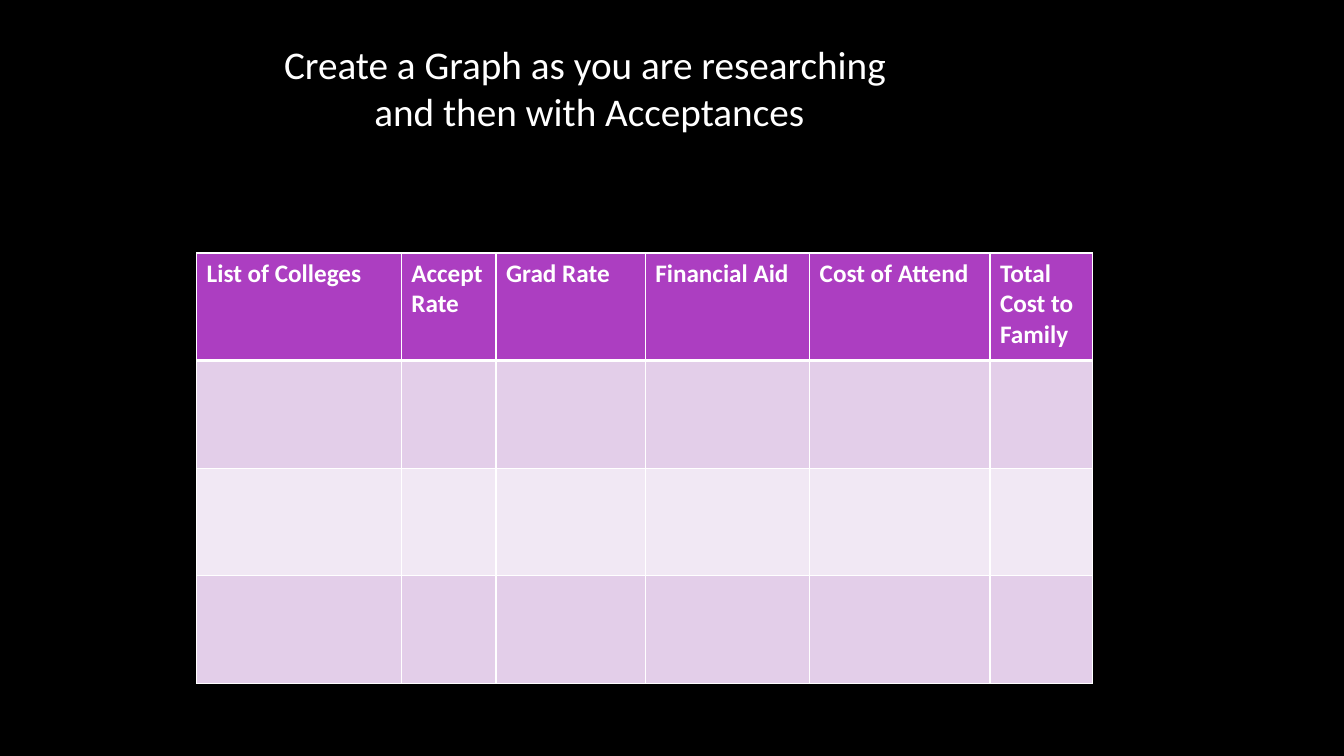
"""Build a slide with a college comparison table."""
from lxml.etree import SubElement
from pptx import Presentation
from pptx.dml.color import RGBColor
from pptx.enum.text import MSO_ANCHOR, MSO_AUTO_SIZE, PP_ALIGN
from pptx.oxml.ns import qn
from pptx.util import Inches, Pt

COLORS = {"back": "000000", "line": "FFFFFF", "text": "FFFFFF",
          "head": "AC3EC1", "dark": "E3CEE9", "light": "F1E8F4"}


def write(frame, text, size=18, bold=False, align=PP_ALIGN.LEFT):
    frame.text = text
    for para in frame.paragraphs:
        para.alignment = align
        for run in para.runs:
            run.font.name = "Calibri"
            run.font.size = Pt(size)
            run.font.bold = bold
            run.font.color.rgb = RGBColor.from_string(COLORS["text"])


def border(cell, side, width):
    line = SubElement(cell._tc.get_or_add_tcPr(), qn(f"a:{side}"), w=str(Pt(width)))
    fill = SubElement(line, qn("a:solidFill"))
    SubElement(fill, qn("a:srgbClr"), val=COLORS["line"])


deck = Presentation()
deck.slide_width, deck.slide_height = Inches(13.33), Inches(7.5)
slide = deck.slides.add_slide(deck.slide_layouts[5])
slide.background.fill.solid()
slide.background.fill.fore_color.rgb = RGBColor.from_string(COLORS["back"])

title = slide.shapes.title
title.left, title.top = Inches(2.54), Inches(0.35)
title.width, title.height = Inches(6.61), Inches(1.04)
frame = title.text_frame
frame.word_wrap = True
frame.auto_size = MSO_AUTO_SIZE.NONE
frame.vertical_anchor = MSO_ANCHOR.TOP
write(frame, "Create a Graph as you are researching \nand then with Acceptances",
      size=28, align=PP_ALIGN.CENTER)

heads = ["List of Colleges", "Accept\nRate", "Grad Rate", "Financial Aid",
         "Cost of Attend", "Total Cost to Family"]
widths = [2.03, 0.94, 1.48, 1.63, 1.79, 1.02]
fills = ["head", "dark", "light", "dark"]

table = slide.shapes.add_table(len(fills), len(heads), Inches(1.95), Inches(2.51),
                               Inches(8.89), Inches(4.27)).table
for column, width in zip(table.columns, widths):
    column.width = Inches(width)

for row, name in enumerate(fills):
    for col, head in enumerate(heads):
        cell = table.cell(row, col)
        border(cell, "lnL", 1)
        border(cell, "lnR", 1)
        border(cell, "lnT", 3 if row == 1 else 1)
        border(cell, "lnB", 3 if row == 0 else 1)
        cell.fill.solid()
        cell.fill.fore_color.rgb = RGBColor.from_string(COLORS[name])
        if row == 0:
            write(cell.text_frame, head, bold=True)

deck.save("out.pptx")
